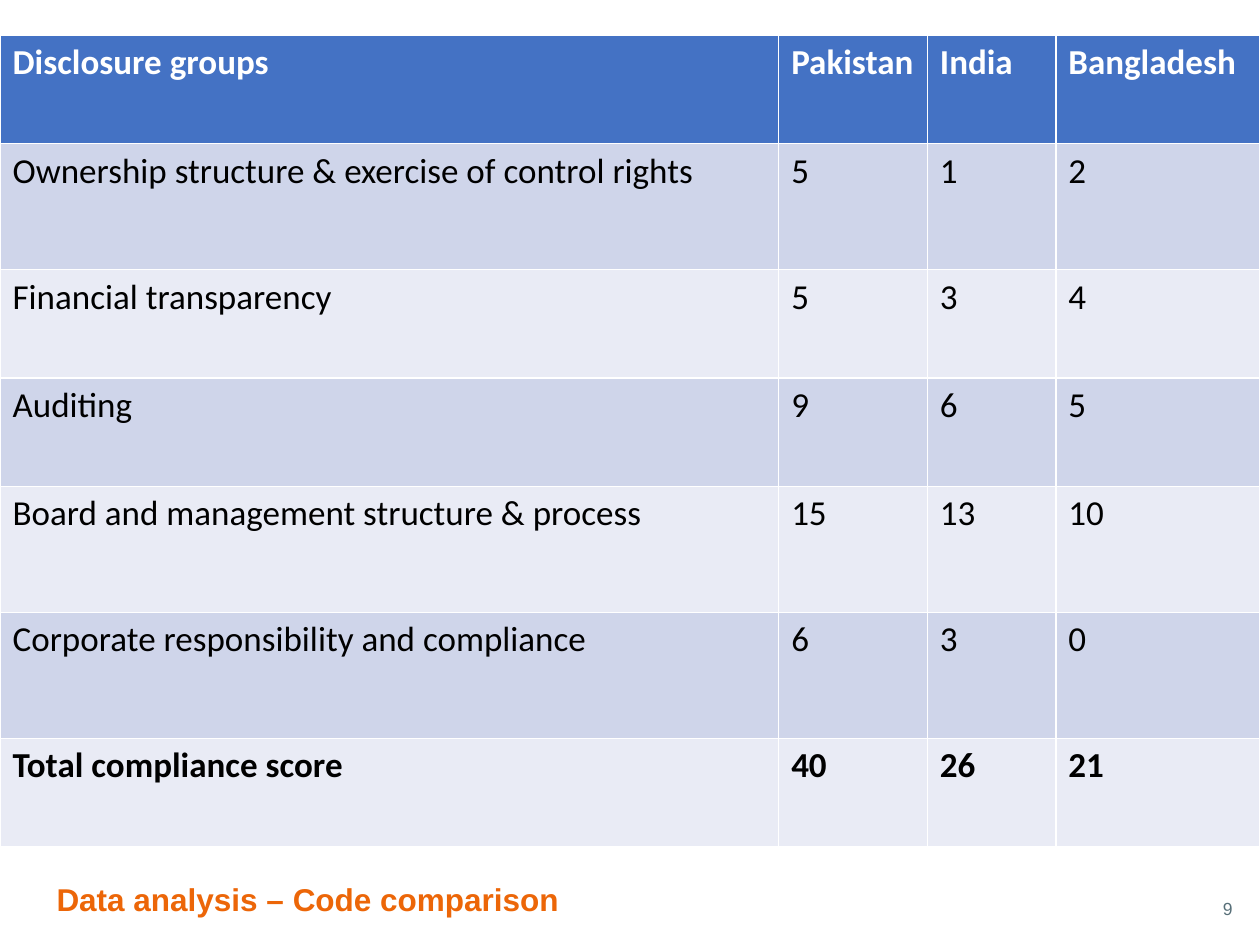
"""Build a slide comparing governance code compliance across three countries."""
from pptx import Presentation
from pptx.dml.color import RGBColor
from pptx.enum.text import MSO_ANCHOR, PP_ALIGN
from pptx.util import Inches, Pt

COLORS = {
    "header": "4472C4",
    "odd": "CFD5EA",
    "even": "E9EBF5",
    "white": "FFFFFF",
    "black": "000000",
    "title": "EC6608",
    "number": "576F78",
}
COL_WIDTHS = [6.18, 1.18, 1.02, 1.62]
ROW_HEIGHTS = [0.86, 1, 0.86, 0.86, 1, 1, 0.86]
ROWS = [
    ["Disclosure groups", "Pakistan", "India", "Bangladesh"],
    ["Ownership structure & exercise of control rights", "5", "1", "2"],
    ["Financial transparency", "5", "3", "4"],
    ["Auditing", "9", "6", "5"],
    ["Board and management structure & process", "15", "13", "10"],
    ["Corporate responsibility and compliance", "6", "3", "0"],
    ["Total compliance score", "40", "26", "21"],
]


def style_run(p, font, size, color, bold=False):
    """Format the only run of a paragraph."""
    r = p.runs[0]
    r.font.name = font
    r.font.size = Pt(size)
    r.font.bold = bold
    r.font.color.rgb = RGBColor.from_string(COLORS[color])


def add_text(s, text, left, top, width, height):
    """Add a wrapped text box and return its text frame."""
    sp = s.shapes.add_textbox(Inches(left), Inches(top), Inches(width), Inches(height))
    tf = sp.text_frame
    tf.word_wrap = True
    tf.text = text
    return tf


prs = Presentation()
prs.slide_width, prs.slide_height = Inches(10), Inches(7.5)
s = prs.slides.add_slide(prs.slide_layouts[6])

tf = add_text(s, "Data analysis – Code comparison", 0.35, 6.97, 6.69, 0.39)
p = tf.paragraphs[0]
p.line_spacing = 0.9
style_run(p, "Arial", 18, "title", bold=True)

table = s.shapes.add_table(
    len(ROWS), len(COL_WIDTHS), Inches(0), Inches(0.28), Inches(10), Inches(sum(ROW_HEIGHTS))
).table
for col, width in zip(table.columns, COL_WIDTHS):
    col.width = Inches(width)
for row, height in zip(table.rows, ROW_HEIGHTS):
    row.height = Inches(height)

for i, values in enumerate(ROWS):
    fill = "header" if i == 0 else "odd" if i % 2 else "even"
    color = "white" if i == 0 else "black"
    bold = i in (0, len(ROWS) - 1)
    for j, value in enumerate(values):
        cell = table.cell(i, j)
        cell.fill.solid()
        cell.fill.fore_color.rgb = RGBColor.from_string(COLORS[fill])
        cell.text_frame.text = value
        style_run(cell.text_frame.paragraphs[0], "Calibri", 20, color, bold)

tf = add_text(s, "9", 9.41, 7.05, 0.47, 0.32)
tf.vertical_anchor = MSO_ANCHOR.MIDDLE
p = tf.paragraphs[0]
p.alignment = PP_ALIGN.RIGHT
style_run(p, "Arial", 10, "number")

prs.save("out.pptx")
